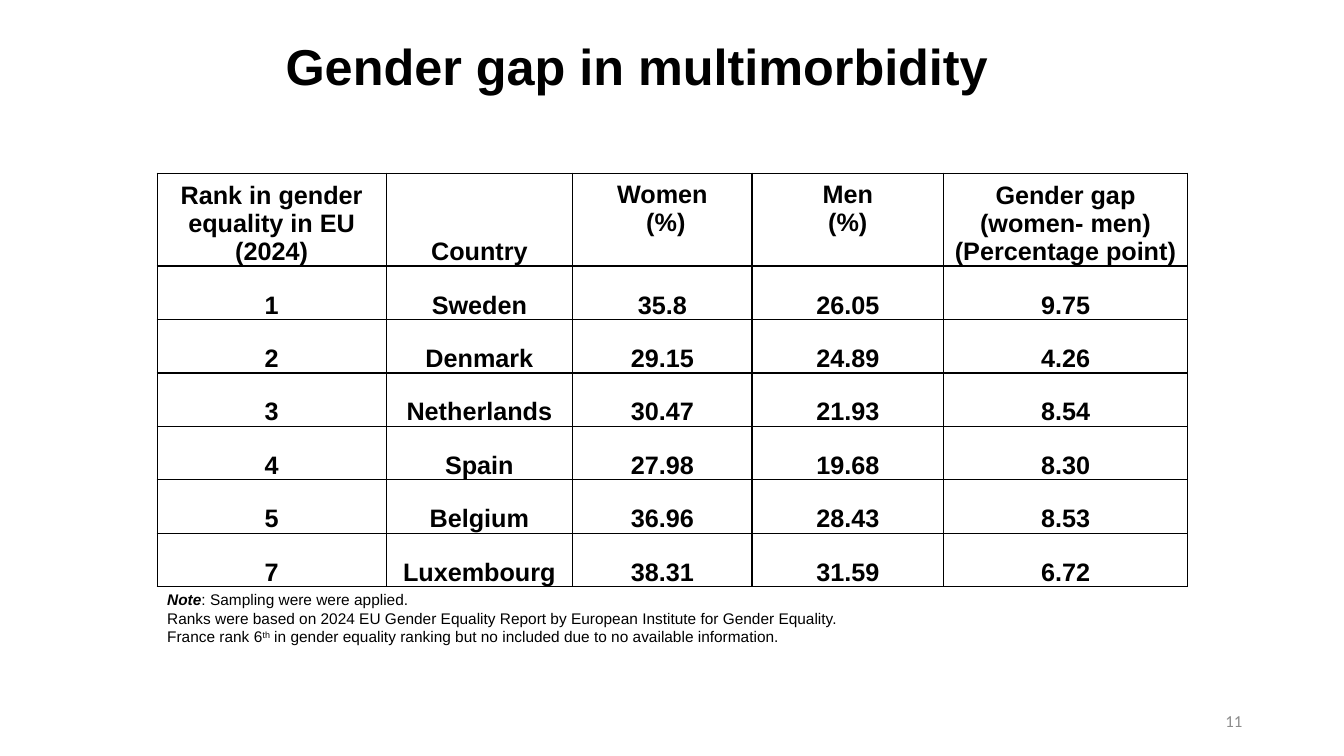
from lxml.etree import SubElement as Sub
from pptx import Presentation
from pptx.dml.color import RGBColor as RGB
from pptx.enum.text import MSO_ANCHOR as Anchor, PP_ALIGN as Align
from pptx.oxml.ns import qn
from pptx.util import Inches, Pt

INK = {"text": "000000", "line": "000000", "page": "8C8C8C"}

HEAD = ["Rank in gender equality in EU (2024)", "Country", "Women\n (%)",
        "Men\n(%)", "Gender gap (women- men)\n(Percentage point)"]
DATA = [
    ["1", "Sweden", "35.8", "26.05", "9.75"],
    ["2", "Denmark", "29.15", "24.89", "4.26"],
    ["3", "Netherlands", "30.47", "21.93", "8.54"],
    ["4", "Spain", "27.98", "19.68", "8.30"],
    ["5", "Belgium", "36.96", "28.43", "8.53"],
    ["7", "Luxembourg", "38.31", "31.59", "6.72"],
]
NOTE = [
    [("Note", "bold"), (": Sampling were were applied.", "")],
    [("Ranks were based on 2024 EU Gender Equality Report by "
      "European Institute for Gender Equality.", "")],
    [("France rank 6", ""), ("th", "super"),
     (" in gender equality ranking but no included due to "
      "no available information.", "")],
]


class Page:
    """Places elements by percent of the slide's width and height."""

    def __init__(self, deck):
        self.wide, self.high = deck.slide_width, deck.slide_height
        self.shapes = deck.slides.add_slide(deck.slide_layouts[6]).shapes

    def x(self, share):
        return round(self.wide * share / 100)

    def y(self, share):
        return round(self.high * share / 100)

    def area(self, left, top, wide, high):
        return self.x(left), self.y(top), self.x(wide), self.y(high)

    def style(self, run, size, bold=False, ink="text", face="Arial"):
        font = run.font
        font.name, font.size, font.bold = face, Pt(size), bold
        font.color.rgb = RGB.from_string(INK[ink])

    def text(self, area, words, size, align, anchor, **look):
        frame = self.shapes.add_textbox(*self.area(*area)).text_frame
        frame.word_wrap, frame.vertical_anchor = True, anchor
        frame.text = words
        para = frame.paragraphs[0]
        para.alignment = align
        self.style(para.runs[0], size, **look)
        return frame

    def note(self, area, lines, size):
        frame = self.shapes.add_textbox(*self.area(*area)).text_frame
        frame.word_wrap = True
        for num, line in enumerate(lines):
            para = frame.add_paragraph() if num else frame.paragraphs[0]
            for words, kind in line:
                run = para.add_run()
                run.text = words
                self.style(run, size, bold=kind == "bold")
                run.font.italic = kind == "bold"
                if kind == "super":
                    run.font._element.set("baseline", "30000")

    def edge(self, cell):
        props = cell._tc.get_or_add_tcPr()
        for side in ("lnL", "lnR", "lnT", "lnB"):
            line = Sub(props, qn("a:" + side), w=str(Pt(1)))
            fill = Sub(line, qn("a:solidFill"))
            Sub(fill, qn("a:srgbClr"), val=INK["line"])

    def cell(self, cell, words, size, foot):
        self.edge(cell)
        cell.fill.background()
        cell.vertical_anchor = Anchor.BOTTOM
        cell.margin_left = cell.margin_right = cell.margin_top = Inches(0.01)
        cell.margin_bottom = foot
        cell.text_frame.text = words
        for para in cell.text_frame.paragraphs:
            para.alignment = Align.CENTER
            self.style(para.runs[0], size, bold=True)

    def table(self, left, top, cols, rows, data, size, lifted):
        area = self.area(left, top, sum(cols), sum(rows))
        grid = self.shapes.add_table(len(rows), len(cols), *area).table
        grid.first_row = grid.horz_banding = False
        for col, share in zip(grid.columns, cols):
            col.width = self.x(share)
        for row, share in zip(grid.rows, rows):
            row.height = self.y(share)
        for r, line in enumerate(data):
            for c, words in enumerate(line):
                foot = Inches(0.29) if (r, c) in lifted else 0
                self.cell(grid.cell(r, c), words, size, foot)


def main():
    deck = Presentation()
    deck.slide_width, deck.slide_height = Inches(13.33), Inches(7.5)
    page = Page(deck)

    # Title
    title = page.text((11.7, 2.93, 72.54, 19.33), "Gender gap in multimorbidity",
                      36, Align.CENTER, Anchor.TOP, bold=True)
    title.paragraphs[0].line_spacing = 0.9
    title.margin_top, title.margin_right = Inches(0.2), Inches(0.25)

    # Page number
    page.text((70.67, 92.67, 22.5, 5.33), "11", 12, Align.RIGHT, Anchor.MIDDLE,
              ink="page", face="Calibri")

    # Country table: the two short headings sit one line higher
    page.table(11.7, 22.93, [17.03, 13.88, 13.35, 14.25, 18.15],
               [12.27] + [7.07] * len(DATA), [HEAD] + DATA, 18,
               lifted={(0, 2), (0, 3)})

    # Note below the table
    page.note((11.7, 77.47, 61.37, 8.8), NOTE, 11)

    deck.save("out.pptx")


if __name__ == "__main__":
    main()
